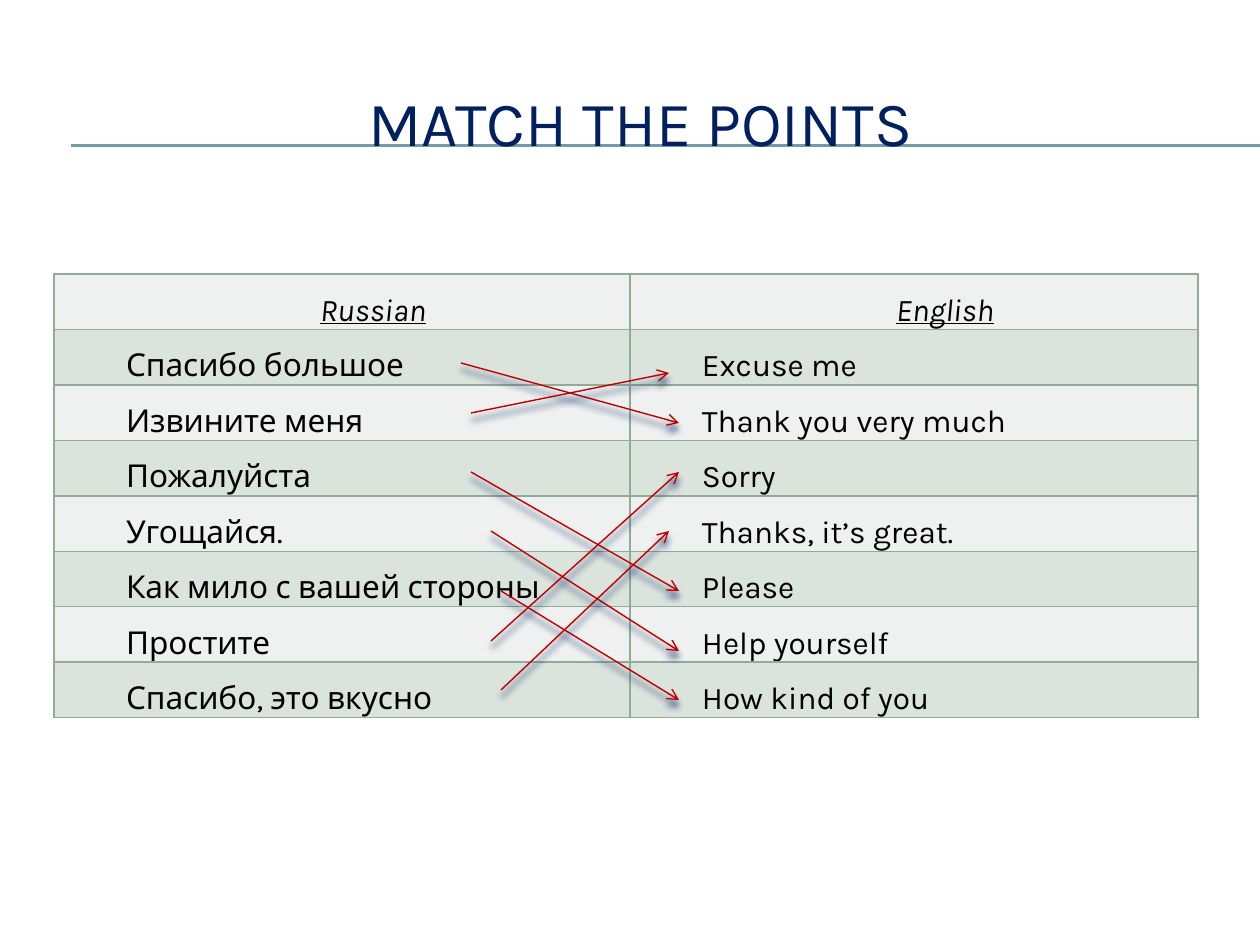
from lxml.etree import SubElement
from pptx import Presentation
from pptx.dml.color import RGBColor
from pptx.enum.shapes import MSO_CONNECTOR
from pptx.enum.text import MSO_ANCHOR, PP_ALIGN
from pptx.oxml.ns import qn
from pptx.util import Pt

PX = 914400 // 126
HEX = {"navy": "002060", "rule": "759AA5", "edge": "90AC97", "ink": "000000",
       "pale": "EEF1EF", "sage": "DBE3DD", "red": "C00000"}
ROWS = [("Russian", "English"),
        ("Спасибо большое", "Excuse me"),
        ("Извините меня", "Thank you very much"),
        ("Пожалуйста", "Sorry"),
        ("Угощайся.", "Thanks, it’s great."),
        ("Как мило с вашей стороны", "Please"),
        ("Простите", "Help yourself"),
        ("Спасибо, это вкусно", "How kind of you")]
# Arrow ends, relative to the table's top left corner
ARROWS = [(407, 89, 625, 149), (417, 139, 615, 99), (417, 198, 625, 317),
          (437, 257, 625, 377), (447, 317, 625, 426), (437, 367, 625, 198),
          (447, 416, 615, 257)]


def rgb(name):
    return RGBColor.from_string(HEX[name])


def put(item, **vals):
    for key, val in vals.items():
        setattr(item, key, val)


def node(up, tag, **vals):
    return SubElement(up, qn(tag), {key: str(val) for key, val in vals.items()})


def style(run, size, color, **vals):
    put(run.font, name="Karla", size=Pt(size), **vals)
    run.font.color.rgb = rgb(color)


def line(slide, ends, color, width):
    """Draw a straight line and return it with its empty effect list."""
    link = slide.shapes.add_connector(
        MSO_CONNECTOR.STRAIGHT, *[v * PX for v in ends])
    link.line.color.rgb = rgb(color)
    link.line.width = Pt(width)
    return link, node(link._element.spPr, "a:effectLst")


def head(slide, x, y, w, h):
    # Double rule behind the title
    for top in (145, 146):
        line(slide, (71, top, 1260, top), "rule", 0.75)
    title = slide.shapes.title
    put(title, left=x * PX, top=y * PX, width=w * PX, height=h * PX)
    slide.shapes._spTree.append(title._element)
    title.text_frame.vertical_anchor = MSO_ANCHOR.MIDDLE
    para = title.text_frame.paragraphs[0]
    para.alignment = PP_ALIGN.CENTER
    run = para.add_run()
    run.text = "MATCH THE POINTS"
    style(run, 36, "navy", bold=False)


def fill(cell, text, top, color):
    """Format one cell: borders, fill, insets and text."""
    props = cell._tc.get_or_add_tcPr()
    for side in "LRTB":
        edge = node(props, f"a:ln{side}", w=Pt(1))
        node(node(edge, "a:solidFill"), "a:srgbClr", val=HEX["edge"])
    cell.fill.solid()
    cell.fill.fore_color.rgb = rgb(color)
    put(cell, margin_left=10 * PX, margin_right=10 * PX,
        margin_top=0, margin_bottom=0)
    para = cell.text_frame.paragraphs[0]
    put(para, line_spacing=1.5,
        alignment=PP_ALIGN.CENTER if top else PP_ALIGN.LEFT)
    para._p.get_or_add_pPr().set("indent", str(62 * PX))
    run = para.add_run()
    run.text = text
    style(run, 18, "ink", bold=False, italic=top, underline=top)


def pairs(slide, x, y, cols, row):
    frame = slide.shapes.add_table(
        len(ROWS), len(cols), x * PX, y * PX, sum(cols) * PX,
        len(ROWS) * row * PX)
    table = frame.table
    for col, width in zip(table.columns, cols):
        col.width = width * PX
    for r, texts in enumerate(ROWS):
        for c, text in enumerate(texts):
            fill(table.cell(r, c), text, r == 0, "sage" if r % 2 else "pale")


def links(slide, x, y):
    for x1, y1, x2, y2 in ARROWS:
        link, effects = line(
            slide, (x + x1, y + y1, x + x2, y + y2), "red", 0.79)
        node(link.line._get_or_add_ln(), "a:tailEnd", type="arrow")
        # Soft shadow straight below
        shade = node(effects, "a:outerShdw", blurRad=Pt(4), dist=Pt(4),
                     dir=90 * 60000, rotWithShape=0)
        node(shade, "a:srgbClr", val=HEX["navy"])


def main():
    deck = Presentation()
    put(deck, slide_width=1260 * PX, slide_height=945 * PX)
    slide = deck.slides.add_slide(deck.slide_layouts[5])
    head(slide, 42, 63, 1197, 116)
    pairs(slide, 54, 274, (576, 568), 55)
    links(slide, 54, 274)
    deck.save("out.pptx")


if __name__ == "__main__":
    main()
